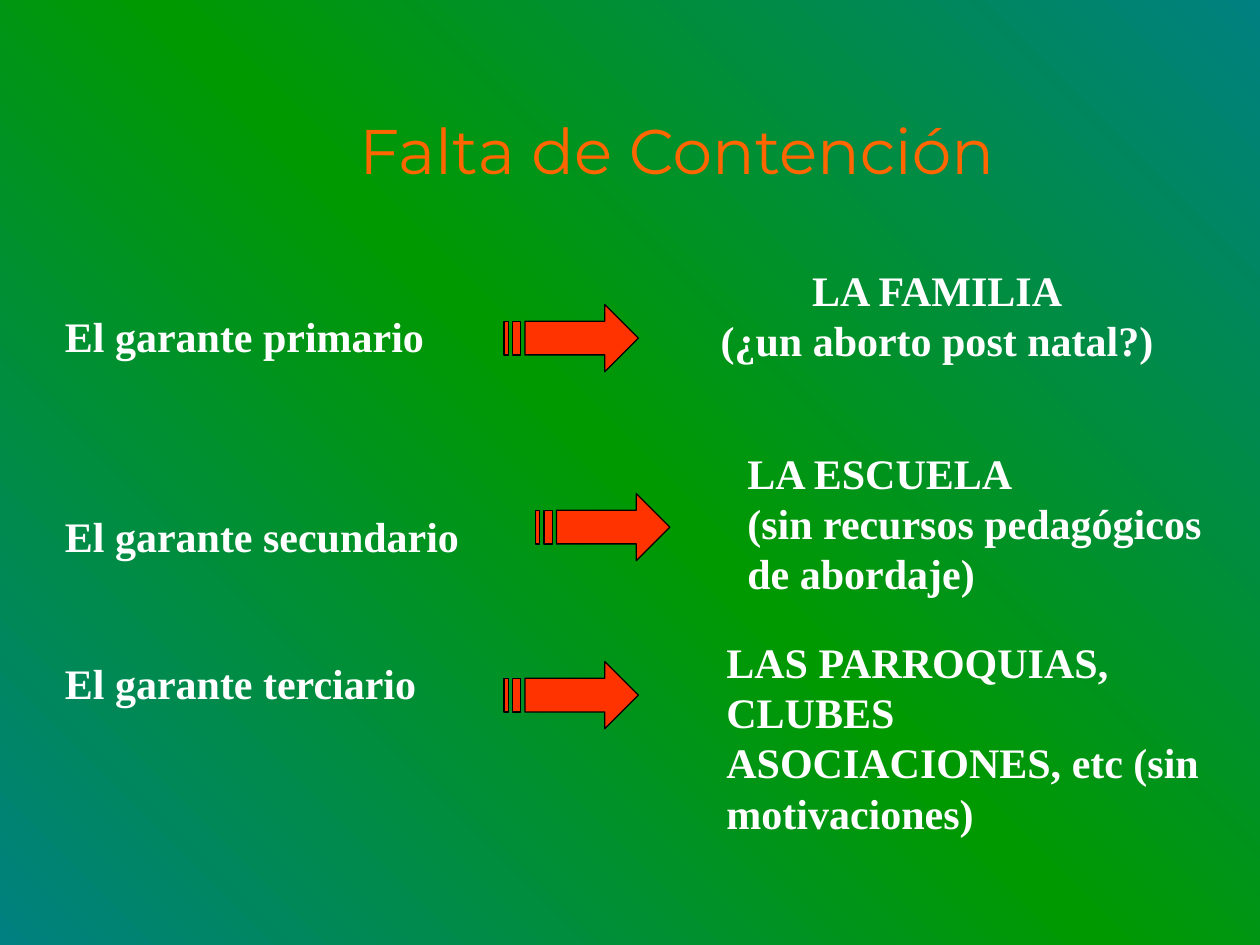
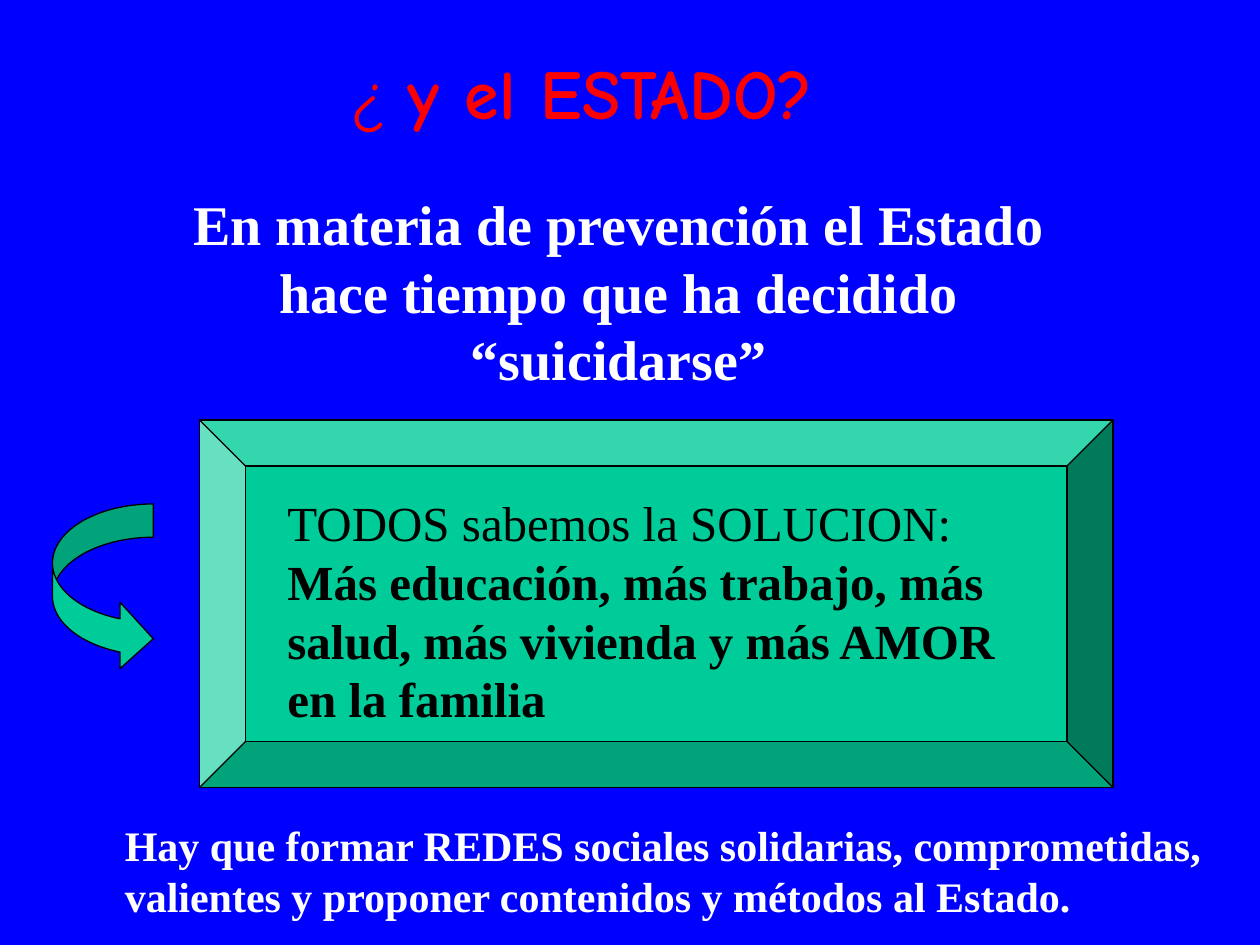
from copy import deepcopy

from pptx import Presentation
from pptx.dml.color import RGBColor
from pptx.enum.shapes import MSO_SHAPE
from pptx.enum.text import PP_ALIGN
from pptx.oxml.ns import qn
from pptx.util import Pt

PX = 7620  # EMU in one px, 120 px to the inch
LEFT, CENTER = PP_ALIGN.LEFT, PP_ALIGN.CENTER
BEVEL, CURVED_ARROW = MSO_SHAPE.BEVEL, MSO_SHAPE.CURVED_RIGHT_ARROW

WHITE, BLACK, RED, ORANGE = "FFFFFF", "000000", "FF0000", "FF6600"
TEAL, GREEN, BLUE, MINT, ARROW_RED = "008080", "009900", "0000FF", "00CC99", "FF3300"
SERIF, TITLE_SANS, TITLE_COMIC = "Times New Roman", "Montserrat", "Comic Neue"

# Striped arrow on a grid of 32 by 16 units
ARROW_UNIT = 4
ARROW_PARTS = [
    [(24, 0), (24, 4), (5, 4), (5, 12), (24, 12), (24, 16), (32, 8)],
    [(2, 4), (2, 12), (4, 12), (4, 4)],
    [(0, 4), (0, 12), (1, 12), (1, 4)],
]


def color(value):
    return RGBColor.from_string(value)


class Slides:
    def __init__(self, width, height):
        self.deck = Presentation()
        self.deck.slide_width, self.deck.slide_height = width * PX, height * PX
        self.page = None

    def add_page(self):
        self.page = self.deck.slides.add_slide(self.deck.slide_layouts[6])

    def solid_background(self, value):
        fill = self.page.background.fill
        fill.solid()
        fill.fore_color.rgb = color(value)

    def gradient_background(self, values, angle):
        fill = self.page.background.fill
        fill.gradient()
        stops = self.page.element.find(".//" + qn("a:gsLst"))
        while len(stops) < len(values):
            stops.append(deepcopy(stops[-1]))
        for index, (stop, value) in enumerate(zip(fill.gradient_stops, values)):
            stop.color.rgb = color(value)
            stop.position = index / (len(values) - 1)
        fill.gradient_angle = angle

    def text(self, at, paragraphs, size=24, value=WHITE, font=SERIF,
             align=LEFT, wrap=True):
        """Each paragraph is a list of (words, bold) runs."""
        box = self.page.shapes.add_textbox(*[length * PX for length in at])
        frame = box.text_frame
        frame.word_wrap = wrap
        for index, runs in enumerate(paragraphs):
            para = frame.add_paragraph() if index else frame.paragraphs[0]
            para.alignment = align
            for words, bold in runs:
                span = para.add_run()
                span.text = words
                span.font.name, span.font.size = font, Pt(size)
                span.font.bold = bold
                span.font.color.rgb = color(value)

    def bold_lines(self, at, lines, **style):
        self.text(at, [[(line, True)] for line in lines], **style)

    def paint(self, shape, value):
        shape.shadow.inherit = False
        shape.fill.solid()
        shape.fill.fore_color.rgb = color(value)
        shape.line.color.rgb = color(BLACK)
        shape.line.width = Pt(0.75)

    def shape(self, kind, at, value, adjustments):
        shape = self.page.shapes.add_shape(kind, *[length * PX for length in at])
        for index, amount in enumerate(adjustments):
            shape.adjustments[index] = amount
        self.paint(shape, value)

    def striped_arrow(self, left, top):
        head, *stripes = ARROW_PARTS
        outline = self.page.shapes.build_freeform(*head[0], scale=ARROW_UNIT * PX)
        outline.add_line_segments(head[1:], close=True)
        for stripe in stripes:
            outline.move_to(*stripe[0])
            outline.add_line_segments(stripe[1:], close=True)
        self.paint(outline.convert_to_shape(left * PX, top * PX), ARROW_RED)


def guarantors_page(slides):
    slides.add_page()
    slides.gradient_background([TEAL, GREEN, TEAL], 45)
    slides.text((290, 100, 709, 115), [[("Falta de Contención", False)]], size=36,
                value=ORANGE, font=TITLE_SANS, align=CENTER, wrap=False)

    # Guarantor, arrow and who it is
    rows = [
        ("El garante primario", (50, 290, 400, 60), (480, 290),
         ["LA FAMILIA", "(¿un aborto post natal?)"],
         (674, 246, 437, 108), CENTER, False),
        ("El garante secundario", (50, 480, 400, 60), (510, 470),
         ["LA ESCUELA", "(sin recursos pedagógicos", "de abordaje)"],
         (700, 420, 468, 156), LEFT, False),
        ("El garante terciario", (50, 620, 359, 60), (480, 630),
         ["LAS PARROQUIAS, CLUBES", "ASOCIACIONES, etc (sin motivaciones)"],
         (680, 600, 520, 204), LEFT, True),
    ]
    for guarantor, guarantor_at, arrow_at, who, who_at, align, wrap in rows:
        slides.bold_lines(guarantor_at, [guarantor], wrap=False)
        slides.striped_arrow(*arrow_at)
        slides.bold_lines(who_at, who, align=align, wrap=wrap)


def state_page(slides):
    slides.add_page()
    slides.solid_background(BLUE)
    slides.text((229, 41, 650, 108), [[("¿ ", False), ("y el ESTADO?", True)]],
                size=40, value=RED, font=TITLE_COMIC, align=CENTER)
    slides.bold_lines(
        (149, 175, 881, 217),
        ["En materia de prevención el Estado hace tiempo que ha decidido “suicidarse”"],
        size=32, align=CENTER)

    # Framed solution
    slides.shape(BEVEL, (190, 400, 870, 350), MINT, [0.125])
    slides.text((262, 463, 742, 292), [[
        ("TODOS sabemos la SOLUCION: ", False),
        ("Más educación, más trabajo, más salud, más vivienda y más AMOR en la familia",
         True)]], size=28, value=BLACK)

    # Closing call
    slides.bold_lines(
        (107, 775, 1076, 120),
        ["Hay que formar REDES sociales solidarias, comprometidas, valientes "
         "y proponer contenidos y métodos al Estado."])
    slides.shape(CURVED_ARROW, (50, 480, 96, 160), MINT, [0.33, 0.66, 0.33])


def main():
    slides = Slides(1200, 900)
    guarantors_page(slides)
    state_page(slides)
    slides.deck.save("out.pptx")


if __name__ == "__main__":
    main()
